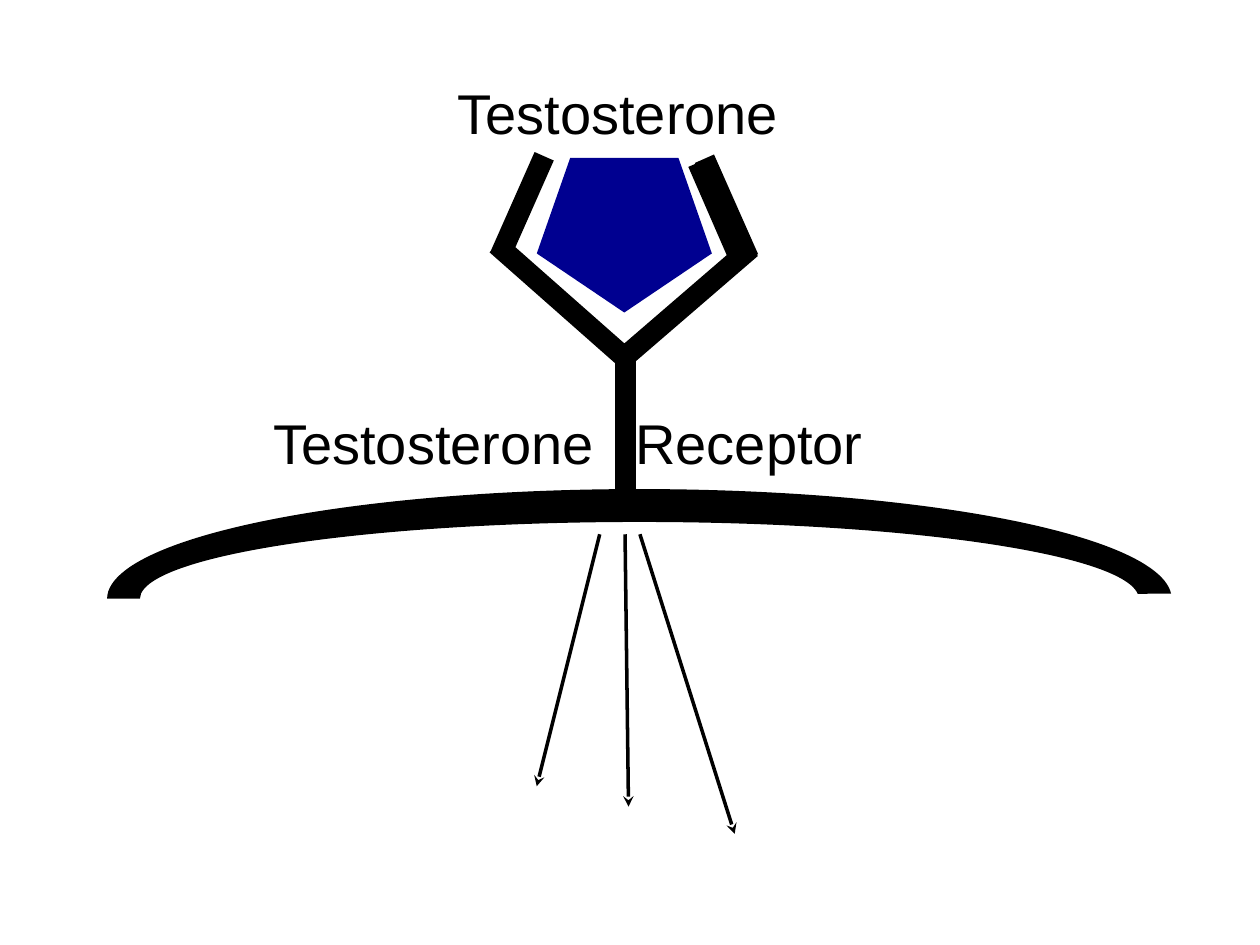
from lxml import etree
from pptx import Presentation
from pptx import util as u
from pptx.dml.color import RGBColor
from pptx.enum import shapes, text
from pptx.oxml import ns

BLACK, NAVY = "000000", "000090"


def colour(hex_string):
    return RGBColor.from_string(hex_string)


def cm(*lengths):
    return [u.Cm(length) for length in lengths]


def write(frame, words, size=32, font="Arial", ink=BLACK, tab=None):
    """Put one formatted line into a text frame, with an optional tab stop in cm."""
    frame.word_wrap = True
    frame.auto_size = text.MSO_AUTO_SIZE.NONE
    frame.vertical_anchor = text.MSO_ANCHOR.MIDDLE
    line = frame.paragraphs[0]
    line.space_before = u.Pt(0)
    run = line.add_run()
    run.text = words
    run.font.size, run.font.name = u.Pt(size), font
    run.font.color.rgb = colour(ink)
    if tab:
        stops = etree.SubElement(line._p.get_or_add_pPr(), ns.qn("a:tabLst"))
        etree.SubElement(stops, ns.qn("a:tab"), pos=str(u.Cm(tab)), algn="l")


class Diagram:
    """Holds the current slide and the style of its elements."""

    def __init__(self, deck, ink=BLACK):
        self.slide = deck.slides.add_slide(deck.slide_layouts[2])
        self.ink = ink

    def heading(self, words, *box):
        title, body = self.slide.placeholders
        title.element.getparent().remove(title.element)
        body.left, body.top, body.width, body.height = cm(*box)
        write(body.text_frame, words, ink=self.ink)

    def label(self, words, *box, tab=None):
        holder = self.slide.shapes.add_textbox(*cm(*box))
        write(holder.text_frame, words, ink=self.ink, tab=tab)

    def solid(self, kind, *box, fill=None, turn=0, adjust=()):
        body = self.slide.shapes.add_shape(kind, *cm(*box))
        body.shadow.inherit = False
        body.fill.solid()
        body.fill.fore_color.rgb = colour(fill or self.ink)
        body.line.fill.background()
        body.rotation = turn
        for i, value in enumerate(adjust):
            body.adjustments[i] = value

    def line(self, *ends, width=12, arrow=False):
        stroke = self.slide.shapes.add_connector(
            shapes.MSO_CONNECTOR.STRAIGHT, *cm(*ends))
        stroke.line.color.rgb = colour(self.ink)
        stroke.line.width = u.Pt(width)
        if arrow:
            etree.SubElement(stroke.line._get_or_add_ln(),
                             ns.qn("a:tailEnd"), type="stealth")
        etree.SubElement(stroke._element.spPr, ns.qn("a:effectLst"))


def main():
    deck = Presentation()
    deck.slide_width, deck.slide_height = cm(25.4, 19.05)
    diagram = Diagram(deck)

    # Hormone
    diagram.heading("Testosterone", 8.97, 1.32, 7.32, 1.88)
    diagram.solid(shapes.MSO_SHAPE.REGULAR_PENTAGON, 10.82, 3.18, 3.53, 3.12,
                  fill=NAVY, turn=180)

    # Cell membrane
    diagram.solid(shapes.MSO_SHAPE.BLOCK_ARC, 2.16, 9.86, 21.46, 4.42,
                  adjust=(108, 215.665, 0.15))

    # Receptor: stem, right arm and claw, left arm and claw, inner right claw
    stem = 12.6
    for part in ((stem, 6.91, stem, 9.86),
                 (15.14, 5, stem, 7.19),
                 (14.2, 3.2, 15.09, 5.21),
                 (10.01, 4.93, 12.57, 7.19),
                 (10.97, 3.15, 10.08, 5.16),
                 (14.07, 3.28, 14.94, 5.28)):
        diagram.line(*part)
    diagram.label("Testosterone\tReceptor", 5.26, 7.98, 14.07, 1.88, tab=7.3)

    # Signals into the cell
    signal_top = 10.77
    for start, tip_x, tip_y in ((12.09, 10.82, 15.85),
                                (stem, 12.67, 16.26),
                                (12.9, 14.81, 16.81)):
        diagram.line(start, signal_top, tip_x, tip_y, width=2, arrow=True)

    deck.save("out.pptx")


if __name__ == "__main__":
    main()
